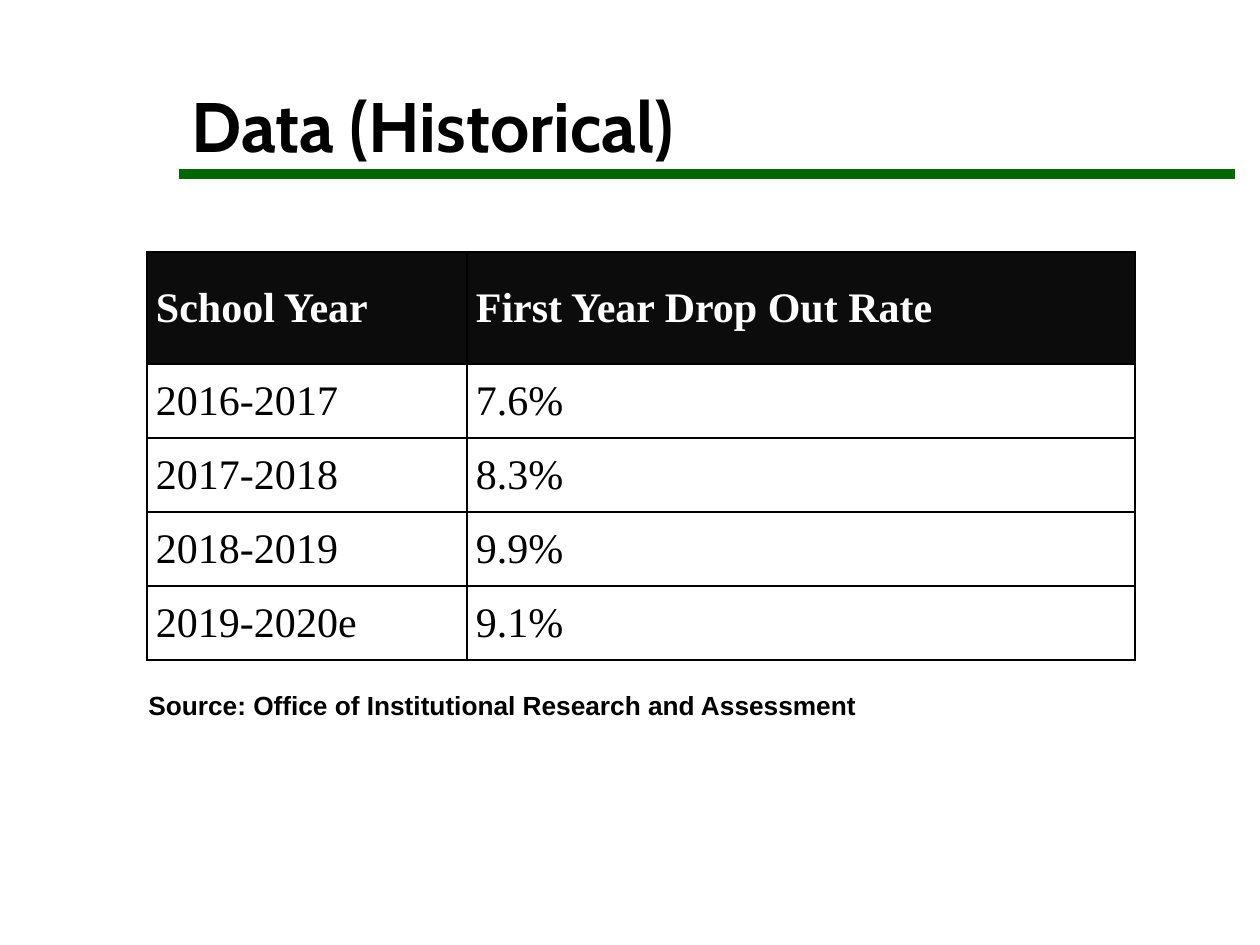
from lxml.etree import SubElement
from pptx import Presentation
from pptx.dml.color import RGBColor
from pptx.enum.shapes import MSO_CONNECTOR
from pptx.enum.text import MSO_ANCHOR
from pptx.oxml import parse_xml
from pptx.oxml.ns import nsdecls, qn
from pptx.util import Emu, Pt

PX_PER_INCH = 126
ROWS = [
    ("School Year", "First Year Drop Out Rate"),
    ("2016-2017", "7.6%"),
    ("2017-2018", "8.3%"),
    ("2018-2019", "9.9%"),
    ("2019-2020e", "9.1%"),
]
COL_WIDTHS = (320, 668)
HEADER_HEIGHT, ROW_HEIGHT = 112, 74


def px(n):
    return Emu(round(n * 914400 / PX_PER_INCH))


def rgb(color):
    return RGBColor.from_string(color)


def set_text(tf, text, *, font, size, color="000000", bold=False, spacing=None):
    p = tf.paragraphs[0]
    if spacing:
        p.line_spacing = spacing
    r = p.add_run()
    r.text = text
    r.font.name, r.font.size, r.font.bold = font, Pt(size), bold
    r.font.color.rgb = rgb(color)


def add_text(s, x, y, w, h, text, anchor=MSO_ANCHOR.TOP, **fmt):
    tf = s.shapes.add_textbox(px(x), px(y), px(w), px(h)).text_frame
    tf.word_wrap = True
    tf.vertical_anchor = anchor
    set_text(tf, text, **fmt)


def add_rule(s, x1, x2, y, color, width):
    line = s.shapes.add_connector(MSO_CONNECTOR.STRAIGHT, px(x1), px(y), px(x2), px(y))
    line.line.color.rgb = rgb(color)
    line.line.width = Pt(width)
    SubElement(line._element.spPr, qn("a:effectLst"))


def set_borders(cell, color, width):
    """Borders must come before the fill in the cell properties."""
    tc_pr = cell._tc.get_or_add_tcPr()
    for i, side in enumerate(("lnL", "lnR", "lnT", "lnB")):
        tc_pr.insert(i, parse_xml(
            f'<a:{side} {nsdecls("a")} w="{Pt(width)}"><a:solidFill>'
            f'<a:srgbClr val="{color}"/></a:solidFill></a:{side}>'))


def fill_cell(cell, text, header):
    cell.vertical_anchor = MSO_ANCHOR.MIDDLE
    cell.margin_left = cell.margin_right = px(9)
    cell.margin_top = cell.margin_bottom = 0
    if header:
        cell.fill.solid()
        cell.fill.fore_color.rgb = rgb("0C0C0C")
    else:
        cell.fill.background()
    set_borders(cell, "000000", 1)
    set_text(cell.text_frame, text, font="Times New Roman", size=24,
             color="FFFFFF" if header else "000000", bold=header)


def add_rate_table(s, x, y):
    heights = [HEADER_HEIGHT] + [ROW_HEIGHT] * (len(ROWS) - 1)
    table = s.shapes.add_table(len(ROWS), len(COL_WIDTHS), px(x), px(y),
                               px(sum(COL_WIDTHS)), px(sum(heights))).table
    table.horz_banding = False
    for col, width in zip(table.columns, COL_WIDTHS):
        col.width = px(width)
    for i, (row, height, texts) in enumerate(zip(table.rows, heights, ROWS)):
        row.height = px(height)
        for cell, text in zip(row.cells, texts):
            fill_cell(cell, text, header=i == 0)


def main():
    prs = Presentation()
    prs.slide_width, prs.slide_height = px(1260), px(945)
    s = prs.slides.add_slide(prs.slide_layouts[6])
    add_rule(s, 179, 1235, 174, "006600", 6)
    add_text(s, 179, 32, 1057, 142, "Data (Historical)", MSO_ANCHOR.BOTTOM,
             font="Cabin", size=40, bold=True, spacing=0.9)
    add_text(s, 136, 683, 756, 70,
             "Source: Office of Institutional Research and Assessment",
             font="Arial", size=15, bold=True)
    add_rate_table(s, 147, 252)
    prs.save("out.pptx")


if __name__ == "__main__":
    main()
